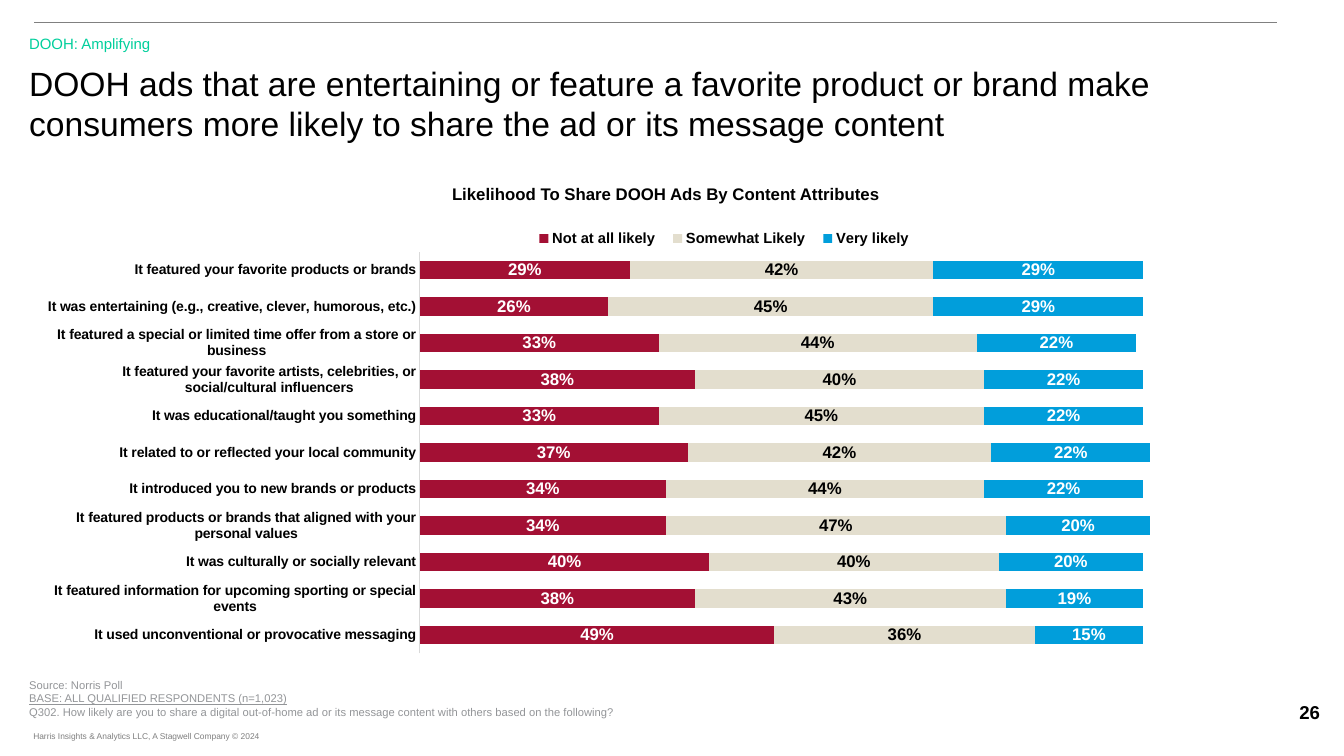
"""Build a slide with a stacked bar chart on sharing DOOH ads."""
from lxml import etree
from pptx import Presentation
from pptx.chart.data import CategoryChartData
from pptx.dml.color import RGBColor
from pptx.enum.chart import XL_CHART_TYPE, XL_LEGEND_POSITION, XL_TICK_MARK
from pptx.enum.shapes import MSO_CONNECTOR
from pptx.enum.text import MSO_ANCHOR, PP_ALIGN
from pptx.oxml import parse_xml
from pptx.oxml.ns import nsdecls, qn
from pptx.util import Inches, Pt

LEFT, CENTER = PP_ALIGN.LEFT, PP_ALIGN.CENTER
MIDDLE = MSO_ANCHOR.MIDDLE
STACKED = XL_CHART_TYPE.BAR_STACKED
TOP = XL_LEGEND_POSITION.TOP
NO_TICK = XL_TICK_MARK.NONE
STRAIGHT = MSO_CONNECTOR.STRAIGHT

BLACK = RGBColor(0x00, 0x00, 0x00)
WHITE = RGBColor(0xFF, 0xFF, 0xFF)
GREEN = RGBColor(0x00, 0xCF, 0x9C)
GRAY = RGBColor(0x93, 0x95, 0x98)
DIM = RGBColor(0x7F, 0x7F, 0x7F)
RULE = RGBColor(0x80, 0x80, 0x80)
PALE = RGBColor(0xD9, 0xD9, 0xD9)
RED = RGBColor(0xA3, 0x10, 0x34)
SAND = RGBColor(0xE3, 0xDE, 0xCE)
BLUE = RGBColor(0x01, 0x9E, 0xDB)

TEXTS = [
    ("DOOH: Amplifying", 0.19, 0.29, 6.67, 0.28, 10.7, GREEN, False, LEFT),
    ("DOOH ads that are entertaining or feature a favorite product or brand make "
     "consumers more likely to share the ad or its message content",
     0.19, 0.57, 12.47, 0.47, 24, BLACK, False, LEFT),
    ("Likelihood To Share DOOH Ads By Content Attributes",
     4.01, 1.77, 5.19, 0.3, 12, BLACK, True, CENTER),
    ("Source: Norris Poll\nBASE: ALL QUALIFIED RESPONDENTS (n=1,023)\n"
     "Q302. How likely are you to share a digital out-of-home ad or its message "
     "content with others based on the following?",
     0.19, 6.68, 10.12, 0.5, 8, GRAY, False, LEFT),
    ("26", 12.48, 6.9, 1.02, 0.33, 13.3, BLACK, True, CENTER),
    ("Harris Insights & Analytics LLC, A Stagwell Company © 2024",
     0.33, 7.2, 2.39, 0.2, 6, DIM, False, LEFT),
]
ROWS = [
    ("It featured your favorite products or brands", 0.29, 0.42, 0.29),
    ("It was entertaining (e.g., creative, clever, humorous, etc.)", 0.26, 0.45, 0.29),
    ("It featured a special or limited time offer from a store or business",
     0.33, 0.44, 0.22),
    ("It featured your favorite artists, celebrities, or social/cultural influencers",
     0.38, 0.4, 0.22),
    ("It was educational/taught you something", 0.33, 0.45, 0.22),
    ("It related to or reflected your local community", 0.37, 0.42, 0.22),
    ("It introduced you to new brands or products", 0.34, 0.44, 0.22),
    ("It featured products or brands that aligned with your personal values",
     0.34, 0.47, 0.2),
    ("It was culturally or socially relevant", 0.4, 0.4, 0.2),
    ("It featured information for upcoming sporting or special events",
     0.38, 0.43, 0.19),
    ("It used unconventional or provocative messaging", 0.49, 0.36, 0.15),
]
SERIES = [("Not at all likely", RED, WHITE), ("Somewhat Likely", SAND, BLACK),
          ("Very likely", BLUE, WHITE)]


def style(font, size, color, bold):
    font.name = "Arial"
    font.size = Pt(size)
    font.color.rgb = color
    font.bold = bold


def layout(parent, index, inner, x, y, w, h):
    for old in parent.findall(qn("c:layout")):
        parent.remove(old)
    target = '<c:layoutTarget val="inner"/>' if inner else ""
    parent.insert(index, parse_xml(
        f'<c:layout {nsdecls("c")}><c:manualLayout>{target}'
        '<c:xMode val="edge"/><c:yMode val="edge"/>'
        f'<c:x val="{x}"/><c:y val="{y}"/><c:w val="{w}"/><c:h val="{h}"/>'
        '</c:manualLayout></c:layout>'))


deck = Presentation()
deck.slide_width, deck.slide_height = Inches(13.33), Inches(7.5)
slide = deck.slides.add_slide(deck.slide_layouts[6])

rule = slide.shapes.add_connector(
    STRAIGHT, Inches(0.34), Inches(0.22), Inches(12.67), Inches(0.22))
rule.line.color.rgb = RULE
rule.line.width = Pt(0.5)
etree.SubElement(rule._element.spPr, qn("a:effectLst"))

frames = []
for text, x, y, w, h, size, color, bold, align in TEXTS:
    box = slide.shapes.add_textbox(Inches(x), Inches(y), Inches(w), Inches(h))
    frame = box.text_frame
    frame.word_wrap = True
    frame.text = text
    for para in frame.paragraphs:
        para.alignment = align
        style(para.font, size, color, bold)
    frames.append(frame)

topic, title, head, source, page, footer = frames
topic.vertical_anchor = MIDDLE
title.paragraphs[0].line_spacing = Pt(29)
source.paragraphs[1].font.underline = True
footer.margin_left = 0
footer.word_wrap = False

data = CategoryChartData(number_format="0%")
names, *columns = zip(*ROWS)
data.categories = names
for (name, fill, ink), values in zip(SERIES, columns):
    data.add_series(name, values)
chart = slide.shapes.add_chart(
    STACKED, Inches(0.41), Inches(2.19), Inches(12.66), Inches(4.38), data).chart
chart.has_title = False
style(chart.font, 12, BLACK, True)

chart.has_legend = True
legend = chart.legend
legend.position = TOP
legend.include_in_layout = False
style(legend.font, 10.5, BLACK, True)
layout(legend._element, 1, False, 0.38, 0.01, 0.31, 0.06)

plot = chart.plots[0]
plot.gap_width = 100
plot.overlap = 100
plot.vary_by_categories = False
layout(plot._element.getparent(), 0, True, 0.24, 0.07, 0.68, 0.91)
for bar, (name, fill, ink) in zip(plot.series, SERIES):
    bar.format.fill.solid()
    bar.format.fill.fore_color.rgb = fill
    labels = bar.data_labels
    labels.show_value = True
    labels.number_format = "0%"
    labels.number_format_is_linked = False
    style(labels.font, 12, ink, True)

cats = chart.category_axis
cats.reverse_order = True
cats.major_tick_mark = NO_TICK
cats.format.line.color.rgb = PALE
cats.format.line.width = Pt(0.75)
style(cats.tick_labels.font, 10, BLACK, True)

scale = chart.value_axis
scale.minimum_scale, scale.maximum_scale = -0.1, 1.1
scale.has_major_gridlines = False
scale.visible = False

deck.save("out.pptx")
